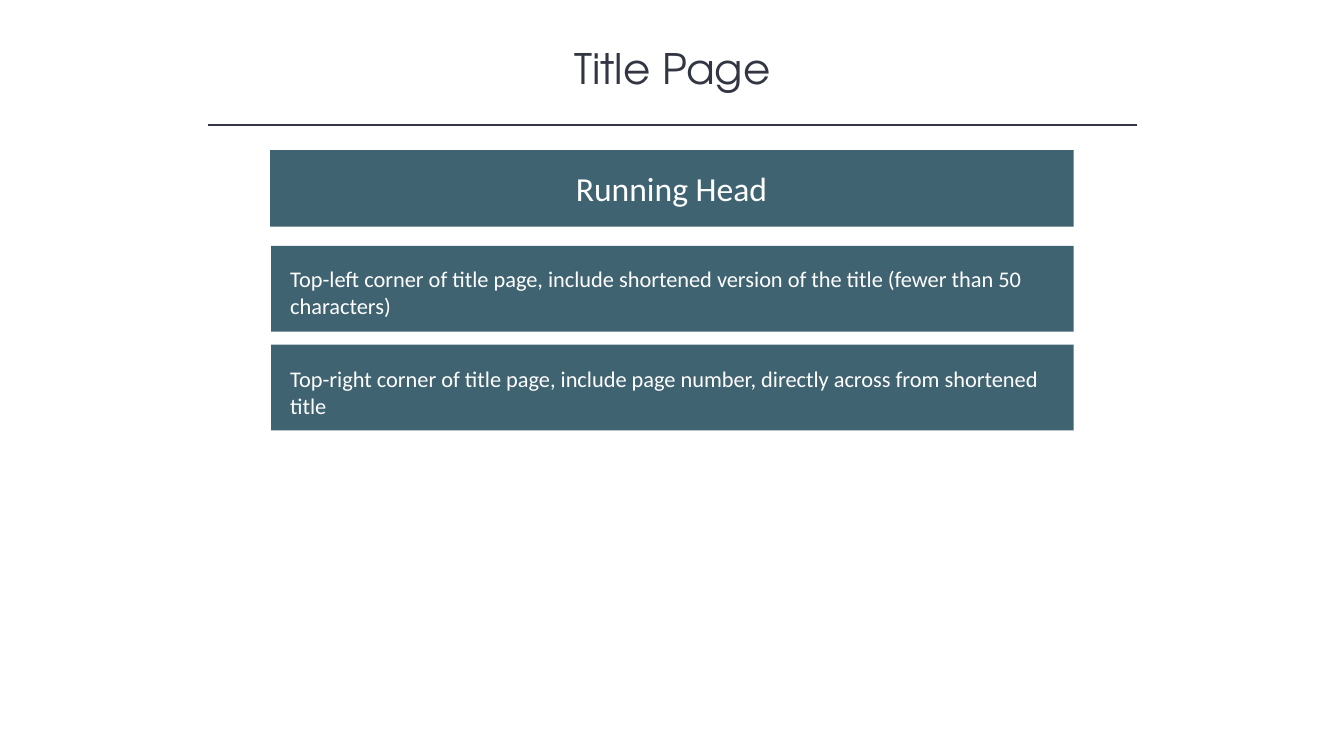
import dataclasses

import pptx
import pptx.dml.color
import pptx.enum.shapes
import pptx.enum.text
import pptx.oxml
import pptx.oxml.ns
import pptx.util

PX = 9144
DARK = "323542"
TEAL = "3F6371"
WHITE = "FFFFFF"
LEFT = pptx.enum.text.PP_ALIGN.LEFT
CENTER = pptx.enum.text.PP_ALIGN.CENTER
RECT = pptx.enum.shapes.MSO_SHAPE.RECTANGLE


@dataclasses.dataclass(frozen=True)
class Box:
    left: int
    top: int
    width: int
    height: int

    def emu(self) -> tuple[int, int, int, int]:
        return self.left * PX, self.top * PX, self.width * PX, self.height * PX


@dataclasses.dataclass(frozen=True)
class Panel:
    frame: Box
    inner: Box
    text: str
    size: int
    align: pptx.enum.text.PP_ALIGN


PANELS = [
    Panel(Box(268, 149, 797, 76), Box(280, 162, 772, 50),
          "Running Head", 24, CENTER),
    Panel(Box(269, 244, 796, 85), Box(278, 258, 771, 62),
          "Top-left corner of title page, include shortened version of the title "
          "(fewer than 50 characters)", 16, LEFT),
    Panel(Box(269, 342, 796, 85), Box(278, 357, 771, 65),
          "Top-right corner of title page, include page number, directly across "
          "from shortened title", 16, LEFT),
]


def color(code: str) -> pptx.dml.color.RGBColor:
    return pptx.dml.color.RGBColor.from_string(code)


def write(shape, text: str, size: int, face: str, ink: str,
          align: pptx.enum.text.PP_ALIGN) -> None:
    frame = shape.text_frame
    frame.word_wrap = True
    frame.auto_size = pptx.enum.text.MSO_AUTO_SIZE.SHAPE_TO_FIT_TEXT
    frame.vertical_anchor = pptx.enum.text.MSO_ANCHOR.TOP
    line = frame.paragraphs[0]
    line.text = text
    line.alignment = align
    line.font.size = pptx.util.Pt(size)
    line.font.name = face
    line.font.color.rgb = color(ink)


def block(slide, box: Box):
    shape = slide.shapes.add_shape(RECT, *box.emu())
    shape.shadow.inherit = False
    shape.fill.solid()
    shape.fill.fore_color.rgb = color(TEAL)
    shape.line.fill.background()
    return shape


def draw(slide, panel: Panel) -> None:
    block(slide, panel.frame)
    label = block(slide, panel.inner)
    write(label, panel.text, panel.size, "Calibri", WHITE, panel.align)


def rule(slide, left: int, right: int, top: int) -> None:
    line = slide.shapes.add_connector(
        pptx.enum.shapes.MSO_CONNECTOR.STRAIGHT,
        left * PX, top * PX, right * PX, top * PX)
    line.line.color.rgb = color(DARK)
    line.line.width = pptx.util.Pt(1)
    line._element.spPr.append(pptx.oxml.parse_xml(
        f"<a:effectLst {pptx.oxml.ns.nsdecls('a')}/>"))


def main() -> None:
    deck = pptx.Presentation()
    deck.slide_width = 1333 * PX
    deck.slide_height = 750 * PX
    slide = deck.slides.add_slide(deck.slide_layouts[6])
    title = slide.shapes.add_textbox(*Box(167, 37, 1000, 61).emu())
    write(title, "Title Page", 30, "TeX Gyre Adventor", DARK, CENTER)
    rule(slide, 206, 1128, 124)
    for panel in PANELS:
        draw(slide, panel)
    deck.save("out.pptx")


if __name__ == "__main__":
    main()
